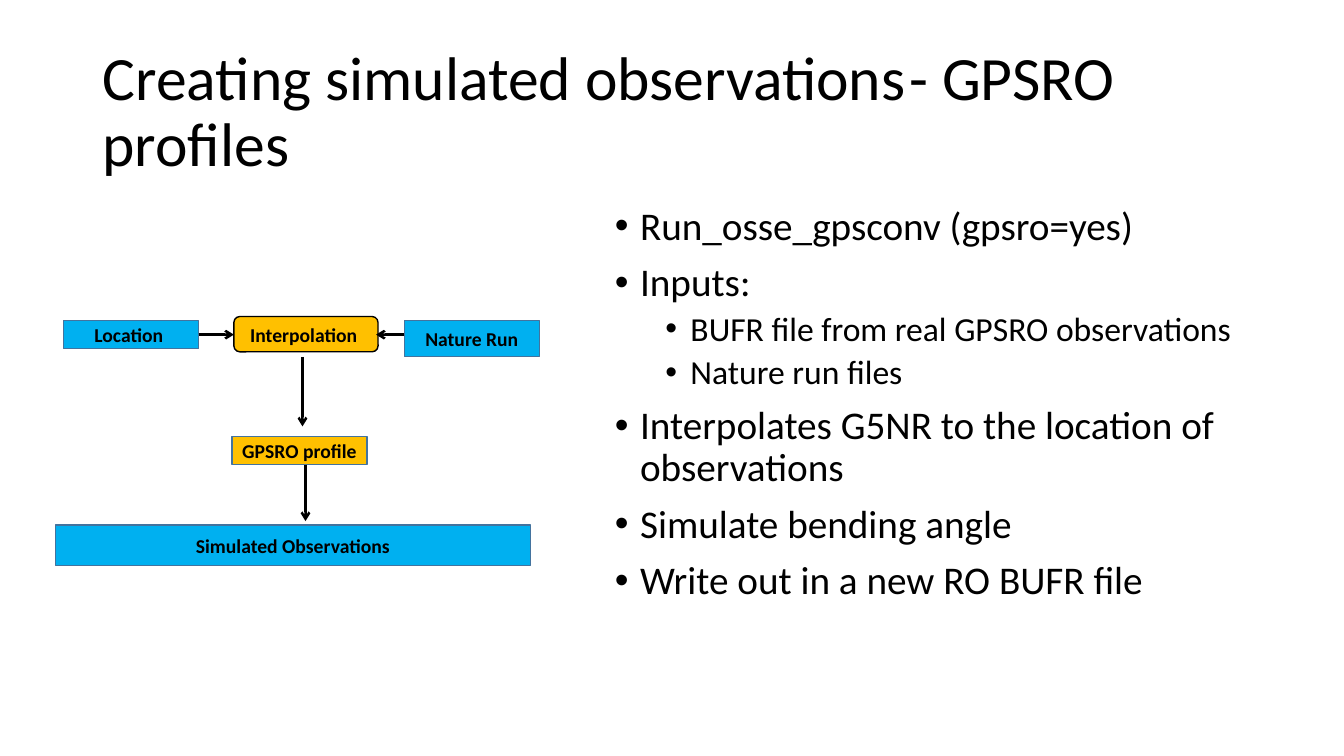
from dataclasses import dataclass

import pptx
import pptx.dml.color
import pptx.enum.shapes
import pptx.enum.text
import pptx.oxml
import pptx.oxml.ns
import pptx.util

SCALE = 9144  # EMU per px, 100 px to the inch
FONT = "Calibri"
BLACK, BLUE, AMBER, EDGE = "000000", "00B0F0", "FFC000", "43739E"
RECT = pptx.enum.shapes.MSO_SHAPE.RECTANGLE
ROUNDED = pptx.enum.shapes.MSO_SHAPE.ROUNDED_RECTANGLE
MIDDLE = pptx.enum.text.MSO_ANCHOR.MIDDLE


@dataclass
class Step:
    label: str
    left: int
    top: int
    width: int
    height: int
    fill: str = BLUE
    edge: str = EDGE
    outline: pptx.enum.shapes.MSO_SHAPE = RECT


@dataclass
class Arrow:
    x1: int
    y1: int
    x2: int
    y2: int


@dataclass
class Bullet:
    text: str
    level: int = 0


STEPS = [
    Step("Nature Run", 401, 318, 134, 36),
    Step("Interpolation ", 232, 314, 143, 35, AMBER, BLACK, ROUNDED),
    Step("Location ", 63, 318, 134, 28),
    Step("GPSRO profile", 230, 433, 134, 28, AMBER),
    Step("Simulated Observations", 55, 521, 471, 40),
]
ARROWS = [
    Arrow(401, 332, 373, 332),
    Arrow(197, 332, 232, 332),
    Arrow(300, 354, 300, 423),
    Arrow(303, 461, 303, 517),
]
BULLETS = [
    Bullet("Run_osse_gpsconv (gpsro=yes)"),
    Bullet("Inputs:"),
    Bullet("BUFR file from real GPSRO observations", 1),
    Bullet("Nature run files", 1),
    Bullet("Interpolates G5NR to the location of observations"),
    Bullet("Simulate bending angle"),
    Bullet("Write out in a new RO BUFR file"),
]


def px(length: int) -> int:
    return pptx.util.Emu(length * SCALE)


def color(value: str) -> pptx.dml.color.RGBColor:
    return pptx.dml.color.RGBColor.from_string(value)


def add_span(para, text: str, size: int, bold: bool = False) -> None:
    span = para.add_run()
    span.text = text
    span.font.name = FONT
    span.font.size = pptx.util.Pt(size)
    span.font.bold = bold
    span.font.color.rgb = color(BLACK)


def add_text_frame(page, left: int, top: int, width: int, height: int):
    box = page.shapes.add_textbox(px(left), px(top), px(width), px(height))
    box.text_frame.word_wrap = True
    return box.text_frame


def add_title(page, text: str) -> None:
    frame = add_text_frame(page, 92, 40, 1150, 145)
    frame.vertical_anchor = MIDDLE
    para = frame.paragraphs[0]
    para.line_spacing = 0.9
    add_span(para, text, 44)


def add_bullets(page, bullets: list[Bullet]) -> None:
    frame = add_text_frame(page, 600, 200, 642, 476)
    for index, bullet in enumerate(bullets):
        para = frame.add_paragraph() if index else frame.paragraphs[0]
        para.level = bullet.level
        para.line_spacing = 0.9
        para.space_before = pptx.util.Pt(5 if bullet.level else 10)
        properties = para._p.get_or_add_pPr()
        properties.set("marL", str(px(25 + 50 * bullet.level)))
        properties.set("indent", str(px(-25)))
        for tag, name, value in (("a:buFont", "typeface", "Arial"), ("a:buChar", "char", "•")):
            mark = pptx.oxml.ns.qn(tag)
            properties.append(properties.makeelement(mark, {name: value}))
        add_span(para, bullet.text, 24 if bullet.level else 28)


def add_step(page, step: Step) -> None:
    shape = page.shapes.add_shape(
        step.outline, px(step.left), px(step.top), px(step.width), px(step.height)
    )
    shape.shadow.inherit = False
    shape.fill.solid()
    shape.fill.fore_color.rgb = color(step.fill)
    shape.line.color.rgb = color(step.edge)
    shape.line.width = pptx.util.Pt(1)
    frame = shape.text_frame
    frame.word_wrap = False
    frame.vertical_anchor = MIDDLE
    frame.margin_top = frame.margin_bottom = 0
    para = frame.paragraphs[0]
    para.alignment = pptx.enum.text.PP_ALIGN.CENTER
    add_span(para, step.label, 14, bold=True)


def add_arrow(page, arrow: Arrow) -> None:
    line = page.shapes.add_connector(
        pptx.enum.shapes.MSO_CONNECTOR.STRAIGHT,
        px(arrow.x1), px(arrow.y1), px(arrow.x2), px(arrow.y2),
    )
    line.line.color.rgb = color(BLACK)
    line.line.width = pptx.util.Pt(1.75)
    pptx.oxml.ns.qn("a:ln")
    stroke = line.line._get_or_add_ln()
    stroke.append(stroke.makeelement(pptx.oxml.ns.qn("a:tailEnd"), {"type": "arrow"}))
    properties = line._element.spPr
    properties.append(properties.makeelement(pptx.oxml.ns.qn("a:effectLst"), {}))


def main() -> None:
    deck = pptx.Presentation()
    deck.slide_width, deck.slide_height = px(1333), px(750)
    page = deck.slides.add_slide(deck.slide_layouts[6])

    # Title and explanation
    add_title(page, "Creating simulated observations\t- GPSRO profiles")
    add_bullets(page, BULLETS)

    # Flow diagram
    for step in STEPS:
        add_step(page, step)
    for arrow in ARROWS:
        add_arrow(page, arrow)

    deck.save("out.pptx")


if __name__ == "__main__":
    main()
